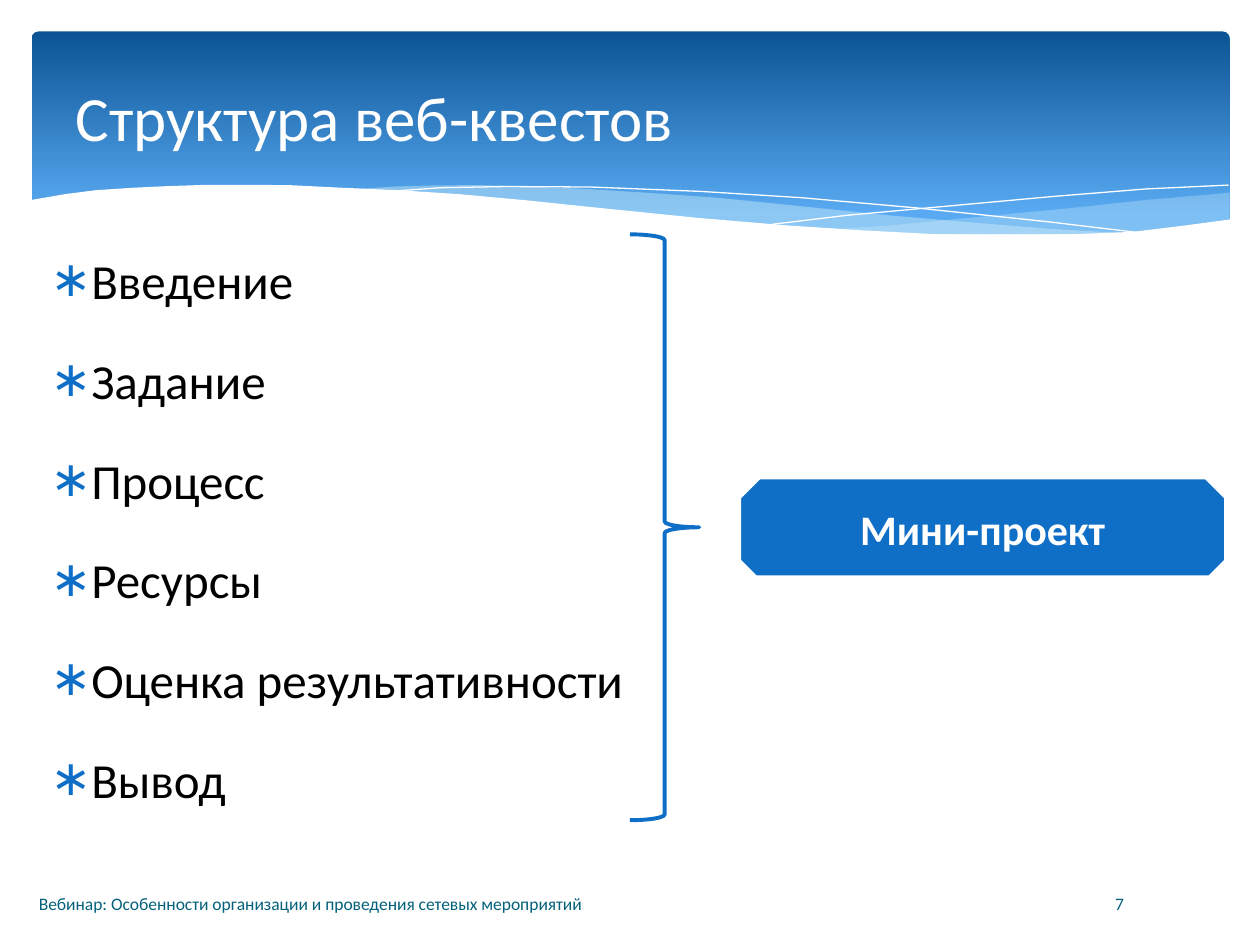
import pptx
import pptx.util
import pptx.dml.color
import pptx.enum.shapes
import pptx.enum.text
import pptx.oxml.ns
from lxml import etree

Pt = pptx.util.Pt
qn = pptx.oxml.ns.qn
MSO_SHAPE = pptx.enum.shapes.MSO_SHAPE
ANCHOR = pptx.enum.text.MSO_ANCHOR
ALIGN = pptx.enum.text.PP_ALIGN
COLORS = {
    name: pptx.dml.color.RGBColor.from_string(value)
    for name, value in {
        "deep": "0B5394", "sky": "59AAF2", "haze": "DBF5F9", "accent": "0F6FC6",
        "footer": "04617B", "white": "FFFFFF", "black": "000000",
    }.items()
}


def draw_wave(points, close):
    """Add a freeform through points given in pt, without shadow."""
    corners = [(Pt(x), Pt(y)) for x, y in points]
    builder = slide.shapes.build_freeform(*corners[0], scale=1.0)
    builder.add_line_segments(corners[1:], close=close)
    wave = builder.convert_to_shape()
    wave.shadow.inherit = False
    return wave


def style_text(paragraph, size, color, bold=False):
    paragraph.font.name = "Calibri"
    paragraph.font.size = Pt(size)
    paragraph.font.bold = bold
    paragraph.font.color.rgb = COLORS[color]


presentation = pptx.Presentation()
presentation.slide_width, presentation.slide_height = Pt(720), Pt(540)
slide = presentation.slides.add_slide(presentation.slide_layouts[5])

# Banner with waves along its lower edge
banner = slide.shapes.add_shape(MSO_SHAPE.ROUNDED_RECTANGLE, Pt(18), Pt(18), Pt(684.7), Pt(116))
banner.adjustments[0] = 0.034
banner.shadow.inherit = False
banner.line.fill.background()
banner.fill.gradient()
banner.fill.gradient_angle = 270
for stop, color, position in zip(banner.fill.gradient_stops, ("deep", "sky"), (0, 0.9)):
    stop.color.rgb = COLORS[color]
    stop.position = position

right_haze = [
    (702, 110.2), (652.3, 114.5), (619.9, 118.1), (560.9, 123.8), (508.3, 128.9),
    (475.9, 131), (517.7, 133.2), (562.3, 134.6), (602, 134.6), (640, 133.9),
    (673, 129.6), (702.7, 125.3), (702.7, 110.2),
]
long_haze = [
    (643, 133.2), (602.6, 131), (558, 127.4), (508.3, 123.1), (452.9, 117.4),
    (409.7, 113), (370, 110.2), (334.8, 108), (302.4, 106.6), (273.6, 105.8),
    (247.7, 106), (225.4, 106.6), (205.9, 108), (246.2, 110.2), (290.9, 114.5),
    (323.3, 117.4), (381.6, 123.1), (432.7, 128.2), (478.8, 131), (529.9, 133.9),
    (573.1, 135.1), (617, 134.8),
]
for points, opacity in ((right_haze, 29), (long_haze, 40)):
    haze = draw_wave(points, close=True)
    haze.line.fill.background()
    haze.fill.solid()
    haze.fill.fore_color.rgb = COLORS["haze"]
    tint = haze.element.spPr.find(qn("a:solidFill")).find(qn("a:srgbClr"))
    etree.SubElement(tint, qn("a:alpha"), val=str(opacity * 1000))

falling_arc = [
    (222.5, 109.4), (252, 107.3), (288.7, 106.6), (337.7, 106.9), (400.3, 109.4),
    (457.9, 113), (523.4, 118.8), (598.3, 126.7), (653, 133.2),
]
rising_arc = [
    (441.4, 128.2), (483.8, 123.1), (538.6, 118.1), (601.9, 112.3), (655.2, 108), (702, 105.8),
]
for points in (falling_arc, rising_arc):
    arc = draw_wave(points, close=False)
    arc.fill.background()
    arc.line.color.rgb = COLORS["white"]
    arc.line.width = Pt(0)

lower_edge = draw_wave([
    (703.4, 125.3), (676.8, 128.9), (647.3, 132.5), (612, 133.9), (571, 134.6),
    (535.7, 133.9), (495.4, 131.8), (450.7, 128.9), (399.6, 124.6), (342, 118.8),
    (301, 114.5), (262.8, 111), (227.5, 108.7), (195.1, 107.3), (165.6, 105.8),
    (139, 105.6), (116, 105.7), (95, 106.4), (76.3, 107.3), (54.7, 108.7),
    (37.4, 110.9), (16.6, 114.5), (16.6, 151.2), (703.4, 151.2),
], close=True)
lower_edge.fill.solid()
lower_edge.fill.fore_color.rgb = COLORS["white"]
lower_edge.line.fill.background()

# Parts of a web quest
parts = slide.shapes.add_textbox(Pt(18), Pt(139.7), Pt(684), Pt(340)).text_frame
parts.word_wrap = True
parts.margin_left = Pt(10.8)
parts.text = "\n".join([
    "Введение", "Задание", "Процесс", "Ресурсы", "Оценка результативности", "Вывод",
])
for index, part in enumerate(parts.paragraphs):
    properties = part._p.get_or_add_pPr()
    properties.set("marL", str(Pt(21.6)))
    properties.set("indent", str(-Pt(21.6)))
    part.space_before = Pt(12 if index else 0)
    part.space_after = Pt(11.4)
    bullet_color = etree.SubElement(properties, qn("a:buClr"))
    etree.SubElement(bullet_color, qn("a:srgbClr"), val=str(COLORS["accent"]))
    etree.SubElement(properties, qn("a:buFont"), typeface="Calibri")
    etree.SubElement(properties, qn("a:buChar"), char="∗")
    style_text(part, 28, "black")

# Footer
for left, width, wording, alignment in (
    (15.1, 571.7, "Вебинар: Особенности организации и проведения сетевых мероприятий", ALIGN.LEFT),
    (591.8, 57.6, "7", ALIGN.RIGHT),
):
    footer = slide.shapes.add_textbox(Pt(left), Pt(496.8), Pt(width), Pt(28.8)).text_frame
    footer.word_wrap = True
    footer.vertical_anchor = ANCHOR.BOTTOM
    footer.text = wording
    footer.paragraphs[0].alignment = alignment
    style_text(footer.paragraphs[0], 10, "footer")

# Title, brought in front of the banner
title = slide.shapes.title
title.element.getparent().append(title.element)
title.left, title.top, title.width, title.height = Pt(36), Pt(26.6), Pt(648), Pt(79.2)
title.text_frame.text = "Структура веб-квестов"
title.text_frame.vertical_anchor = ANCHOR.MIDDLE
title.text_frame.paragraphs[0].alignment = ALIGN.LEFT
style_text(title.text_frame.paragraphs[0], 36, "white")

# Brace leading to the result
brace = slide.shapes.add_shape(MSO_SHAPE.RIGHT_BRACE, Pt(360), Pt(133.9), Pt(39.6), Pt(334.8))
brace.shadow.inherit = False
brace.fill.background()
brace.line.color.rgb = COLORS["accent"]
brace.line.width = Pt(2.25)

result = slide.shapes.add_shape(
    MSO_SHAPE.SNIP_2_SAME_RECTANGLE, Pt(422.6), Pt(272.9), Pt(277.9), Pt(56.9))
result.adjustments[0], result.adjustments[1] = 0.199, 0.163
result.shadow.inherit = False
result.fill.solid()
result.fill.fore_color.rgb = COLORS["accent"]
result.line.color.rgb = COLORS["white"]
result.line.width = Pt(2)
result.text_frame.text = "Мини-проект"
result.text_frame.vertical_anchor = ANCHOR.MIDDLE
result.text_frame.paragraphs[0].alignment = ALIGN.CENTER
style_text(result.text_frame.paragraphs[0], 24, "white", bold=True)

presentation.save("out.pptx")
